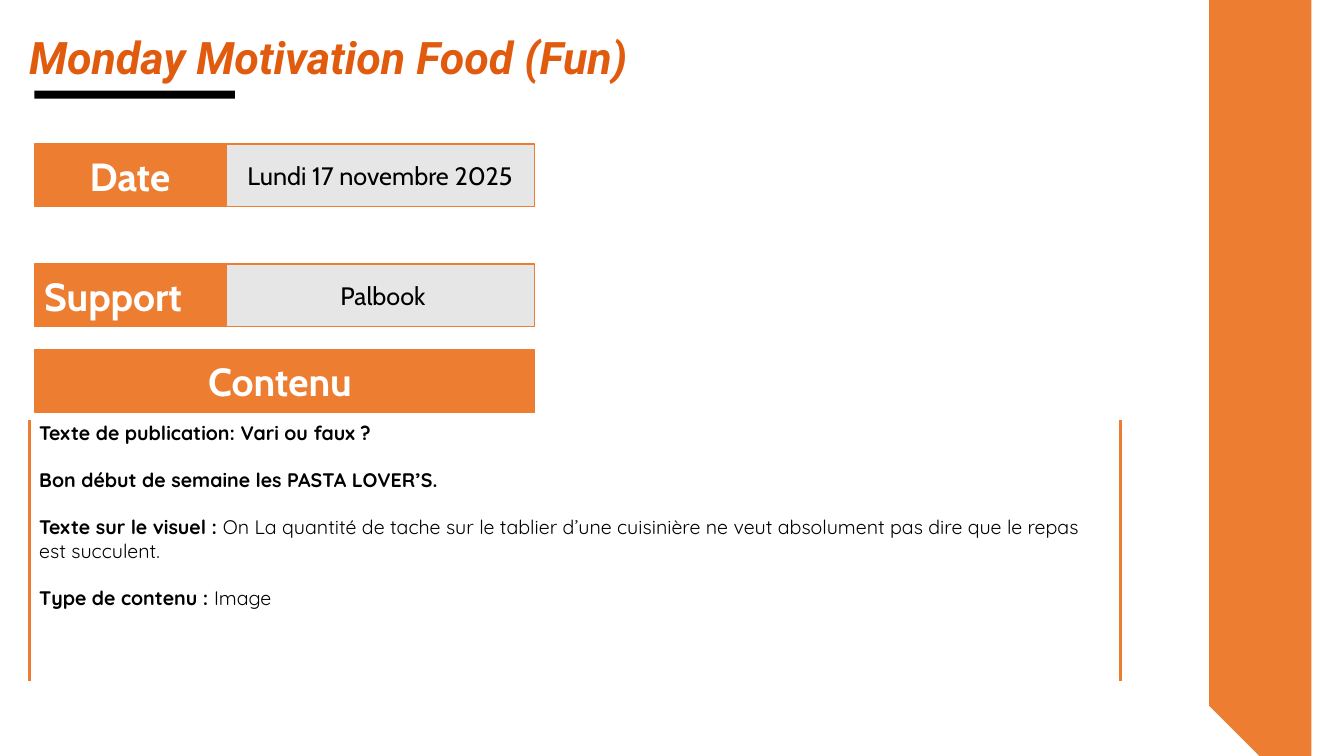
from lxml import etree
from pptx import Presentation
from pptx import util as u
from pptx.dml.color import RGBColor
from pptx.enum import shapes, text
from pptx.oxml.ns import qn

ORANGE, GREY, BLACK, WHITE = "ED7D31", "E7E6E6", "000000", "FFFFFF"
LABEL = dict(size=u.Pt(28), name="Cabin", bold=True, color=WHITE)
VALUE = dict(size=u.Pt(18), name="Cabin", color=BLACK)
TITLE = dict(size=u.Pt(32), name="Roboto", bold=True, italic=True, color="E15B0F")
STRONG = dict(size=u.Pt(14), name="Quicksand", bold=True, color=BLACK)
PLAIN = {**STRONG, "bold": False}

LEFT, LABEL_WIDTH, VALUE_WIDTH, ROW_HEIGHT = 0.34, 1.9, 3.06, 0.62
CENTER, START = text.PP_ALIGN.CENTER, text.PP_ALIGN.LEFT
FIELDS = [
    (1.43, "Date", CENTER, "Lundi 17 novembre 2025"),
    (2.62, "Support", START, " Palbook"),
    (3.47, "Contenu ", CENTER, None),
]
BODY = [
    [("Texte de publication: Vari ou faux ?", STRONG)],
    [("Bon début de semaine les PASTA LOVER’S.", STRONG)],
    [("Texte sur le visuel : ", STRONG),
     ("On La quantité de tache sur le tablier d’une cuisinière ne veut "
      "absolument pas dire que le repas est succulent.", PLAIN)],
    [("Type de contenu : ", STRONG), ("Image", PLAIN)],
]
BAND = [(12.17, 0), (13.33, 0), (13.34, 7.5), (12.35, 7.48)]
RULES_X, RULES_Y = (0.29, 11.11), (4.17, 6.76)

deck = Presentation()
deck.slide_width, deck.slide_height = u.Inches(13.33), u.Inches(7.5)
page = deck.slides.add_slide(deck.slide_layouts[6])


def color(value):
    return RGBColor.from_string(value)


def paint(shape, fill, line=None):
    shape.shadow.inherit = False
    shape.fill.solid()
    shape.fill.fore_color.rgb = color(fill)
    if line:
        shape.line.color.rgb = color(line)
        shape.line.width = u.Pt(1)
    else:
        shape.line.fill.background()


def write(shape, paragraphs, align, anchor, gap=0):
    frame = shape.text_frame
    frame.word_wrap = True
    frame.vertical_anchor = anchor
    for index, spans in enumerate(paragraphs):
        para = frame.add_paragraph() if index else frame.paragraphs[0]
        para.alignment = align
        para.space_before = u.Pt(gap if index else 0)
        for words, style in spans:
            span = para.add_run()
            span.text = words
            for key, value in style.items():
                if key == "color":
                    span.font.color.rgb = color(value)
                else:
                    setattr(span.font, key, value)


def add_bar(left, top, width, height, fill, line=None):
    bar = page.shapes.add_shape(
        shapes.MSO_SHAPE.RECTANGLE, *map(u.Inches, (left, top, width, height)))
    paint(bar, fill, line)
    return bar


def add_field(left, top, width, fill, words, style, align):
    box = add_bar(left, top, width, ROW_HEIGHT, fill, ORANGE)
    write(box, [[(words, style)]], align, text.MSO_ANCHOR.MIDDLE)


def add_text(left, top, width, height, paragraphs, align, gap=0):
    box = page.shapes.add_textbox(*map(u.Inches, (left, top, width, height)))
    write(box, paragraphs, align, text.MSO_ANCHOR.TOP, gap)


outline = page.shapes.build_freeform(*BAND[0], scale=u.Inches(1))
outline.add_line_segments(BAND[1:], close=True)
paint(outline.convert_to_shape(), ORANGE, ORANGE)

add_bar(LEFT, 0.9, 1.99, 0.08, BLACK)

for top, label, align, value in FIELDS:
    width = LABEL_WIDTH if value else LABEL_WIDTH + VALUE_WIDTH
    add_field(LEFT, top, width, ORANGE, label, LABEL, align)
    if value:
        add_field(LEFT + width, top, VALUE_WIDTH, GREY, value, VALUE, CENTER)

for x in RULES_X:
    rule = page.shapes.add_connector(
        shapes.MSO_CONNECTOR.STRAIGHT,
        *map(u.Inches, (x, RULES_Y[0], x, RULES_Y[1])))
    rule.line.color.rgb = color(ORANGE)
    rule.line.width = u.Pt(2.25)
    etree.SubElement(rule.element.spPr, qn("a:effectLst"))

add_text(0.29, 4.13, 10.82, 1.99, BODY, START, gap=16.8)
add_text(0.19, 0.25, 11.03, 0.52,
         [[("Monday Motivation Food (Fun)", TITLE)]], text.PP_ALIGN.JUSTIFY)

deck.save("out.pptx")
